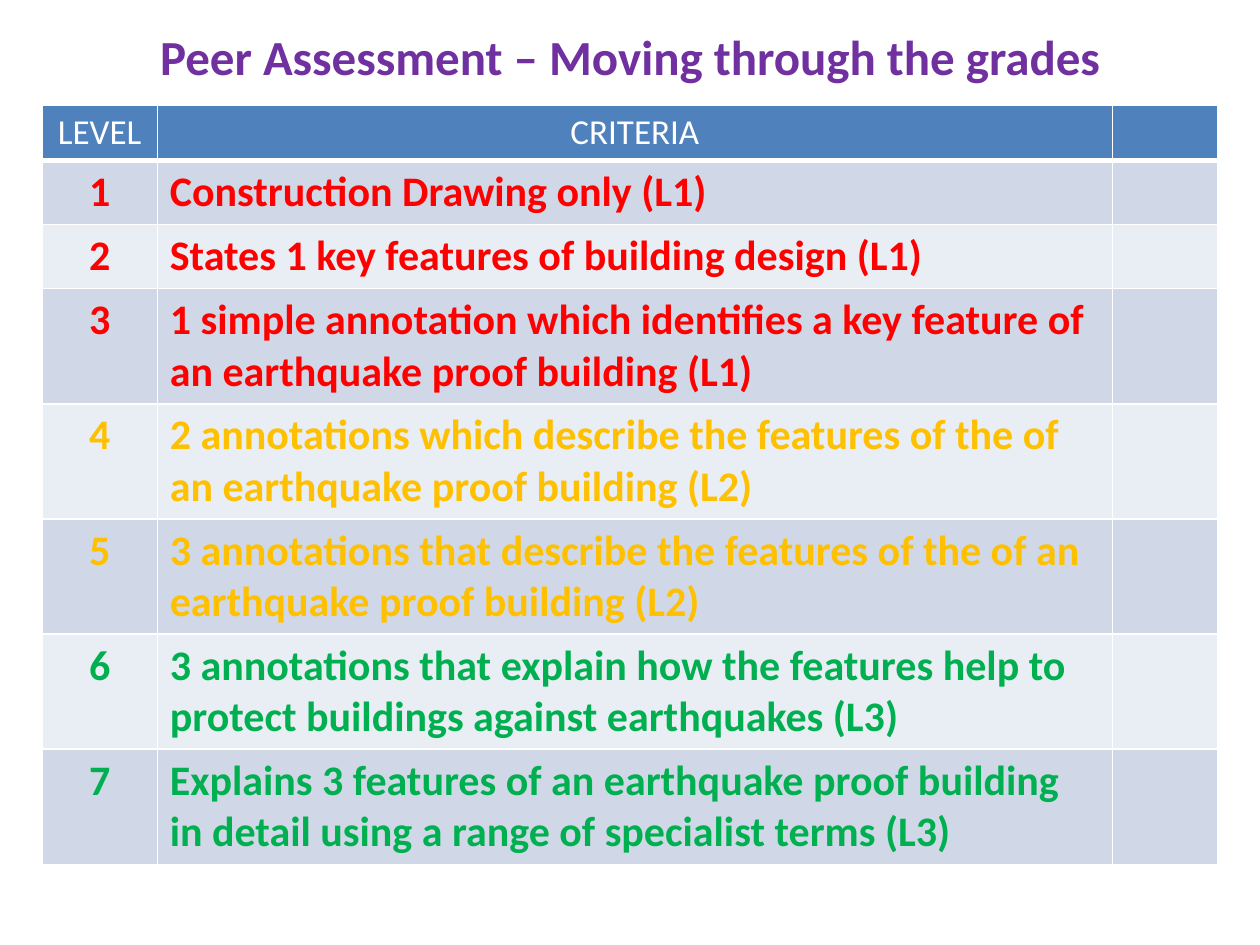
from lxml import etree
from pptx import Presentation
from pptx.dml.color import RGBColor
from pptx.enum import text
from pptx.oxml.ns import qn
from pptx.util import Cm, Pt

TITLE = "Peer Assessment – Moving through the grades"
HEADINGS = ("LEVEL", "CRITERIA", "")
# criterion, colour band, lines of text
CRITERIA = [
    ("Construction Drawing only (L1)", "red", 1),
    ("States 1 key features of building design (L1)", "red", 1),
    ("1 simple annotation which identifies a key feature of an earthquake "
     "proof building (L1)", "red", 2),
    ("2 annotations which describe the features of the of an earthquake "
     "proof building (L2)", "amber", 2),
    ("3 annotations that describe the features of the of an earthquake "
     "proof building (L2)", "amber", 2),
    ("3 annotations that explain how the features help to protect buildings "
     "against earthquakes (L3)", "green", 2),
    ("Explains 3 features of an earthquake proof building in detail using a "
     "range of specialist terms (L3)", "green", 2),
]

THEME = {
    "font": "Calibri",
    "title": "7030A0", "heading": "FFFFFF", "border": "FFFFFF",
    "red": "FF0000", "amber": "FFC000", "green": "00B050",
    "header_fill": "4F81BD", "row_fills": ("D0D8E8", "E9EDF4"),
    "title_size": 28, "heading_size": 20, "body_size": 24,
}
COLUMN_WIDTHS = (2.32, 19.26, 2.12)
HEADER_HEIGHT = 1.11
ROW_HEIGHTS = {1: 1.29, 2: 2.32}
TABLE_LEFT, TABLE_TOP = 0.85, 2.12
CENTRE, LEFT = text.PP_ALIGN.CENTER, text.PP_ALIGN.LEFT


def write(frame, words, size, colour, bold, align):
    para = frame.paragraphs[0]
    para.alignment = align
    if not words:
        return
    span = para.add_run()
    span.text = words
    formats = {"name": THEME["font"], "size": Pt(size), "bold": bold}
    for name, value in formats.items():
        setattr(span.font, name, value)
    span.font.color.rgb = RGBColor.from_string(THEME[colour])


def set_borders(cell, widths):
    """Draw the left, right, top and bottom borders, widths in points."""
    properties = cell._tc.get_or_add_tcPr()
    for side, width in zip("LRTB", widths):
        line = etree.SubElement(properties, qn(f"a:ln{side}"), w=str(Pt(width)))
        fill = etree.SubElement(line, qn("a:solidFill"))
        etree.SubElement(fill, qn("a:srgbClr"), val=THEME["border"])


def add_title(page):
    title = page.shapes.title
    place = {"left": Cm(1.27), "top": Cm(0), "width": Cm(22.86), "height": Cm(2.24)}
    for name, value in place.items():
        setattr(title, name, value)
    title.text_frame.vertical_anchor = text.MSO_ANCHOR.MIDDLE
    write(title.text_frame, TITLE, THEME["title_size"], "title", True, CENTRE)


def add_criteria_table(page):
    heights = [HEADER_HEIGHT] + [ROW_HEIGHTS[lines] for _, _, lines in CRITERIA]
    table = page.shapes.add_table(
        len(heights), len(COLUMN_WIDTHS), Cm(TABLE_LEFT), Cm(TABLE_TOP),
        Cm(sum(COLUMN_WIDTHS)), Cm(sum(heights))).table
    for column, width in zip(table.columns, COLUMN_WIDTHS):
        column.width = Cm(width)

    rows = [(HEADINGS, "heading")]
    rows += [((str(level), criterion, ""), band)
             for level, (criterion, band, _) in enumerate(CRITERIA, 1)]
    for r, (words, colour) in enumerate(rows):
        table.rows[r].height = Cm(heights[r])
        header = r == 0
        fill = THEME["header_fill"] if header else THEME["row_fills"][(r - 1) % 2]
        size = THEME["heading_size" if header else "body_size"]
        for c, entry in enumerate(words):
            cell = table.cell(r, c)
            set_borders(cell, (1, 1, 1, 3 if header else 1))
            cell.fill.solid()
            cell.fill.fore_color.rgb = RGBColor.from_string(fill)
            align = CENTRE if header or c == 0 else LEFT
            write(cell.text_frame, entry, size, colour, not header, align)


def main():
    deck = Presentation()
    deck.slide_width, deck.slide_height = Cm(25.4), Cm(19.05)
    page = deck.slides.add_slide(deck.slide_layouts.get_by_name("Title Only"))
    add_title(page)
    add_criteria_table(page)
    deck.save("out.pptx")


if __name__ == "__main__":
    main()
